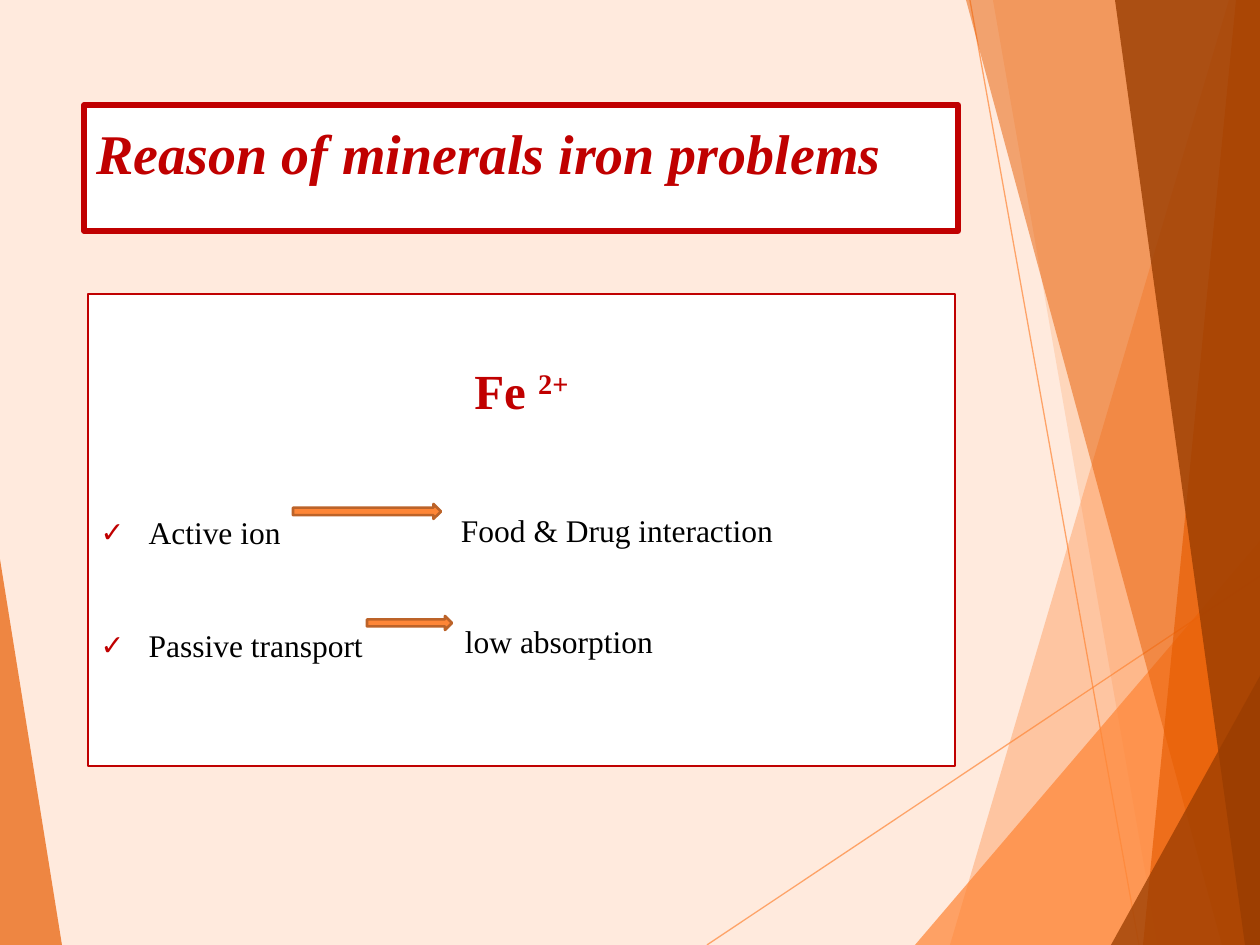
from dataclasses import dataclass

from lxml.etree import SubElement
from pptx import Presentation
from pptx.dml.color import RGBColor
from pptx.enum.shapes import MSO_CONNECTOR, MSO_SHAPE
from pptx.enum.text import MSO_ANCHOR, MSO_AUTO_SIZE, PP_ALIGN
from pptx.oxml.ns import qn
from pptx.util import Emu, Pt

PX = 914400 // 126
WIDTH, HEIGHT = 1260, 945


@dataclass(frozen=True)
class Theme:
    font: str = "Times New Roman"
    background: str = "FFEADD"
    panel: str = "FFFFFF"
    accent: str = "C00000"
    text: str = "000000"
    orange: str = "FE8637"
    deep_orange: str = "E75C01"
    brown: str = "9A3D01"
    arrow_edge: str = "BC6329"
    title_size: int = 32
    formula_size: int = 28
    body_size: int = 18


def px(value):
    return Emu(value * PX)


def set_alpha(fill_parent, percent):
    color = fill_parent.find(f".//{qn('a:srgbClr')}")
    SubElement(color, qn("a:alpha")).set("val", str(percent * 1000))


class SlideBuilder:
    def __init__(self, slide, theme):
        self.slide = slide
        self.theme = theme
        self.shapes = slide.shapes
        self.fill(slide.background, theme.background)

    def fill(self, item, color):
        item.fill.solid()
        item.fill.fore_color.rgb = RGBColor.from_string(color)

    def outline(self, shape, color, width):
        shape.line.color.rgb = RGBColor.from_string(color)
        shape.line.width = Pt(width)

    def facet(self, points, color, alpha):
        """Draw a translucent background polygon."""
        builder = self.shapes.build_freeform(*points[0], scale=PX)
        builder.add_line_segments(points[1:], close=True)
        shape = builder.convert_to_shape()
        shape.shadow.inherit = False
        self.fill(shape, color)
        set_alpha(shape._element.spPr.find(qn("a:solidFill")), alpha)
        shape.line.fill.background()

    def thin_line(self, start, end):
        line = self.shapes.add_connector(
            MSO_CONNECTOR.STRAIGHT, *map(px, start + end))
        self.outline(line, self.theme.orange, 0.75)
        properties = line._element.spPr
        set_alpha(properties.find(qn("a:ln")), 70)
        SubElement(properties, qn("a:effectLst"))

    def panel(self, index, left, top, width, height, border, inset_top):
        """Place a template placeholder as a framed panel in front."""
        shape = self.slide.placeholders[index]
        shape.left, shape.top = px(left), px(top)
        shape.width, shape.height = px(width), px(height)
        self.fill(shape, self.theme.panel)
        self.outline(shape, self.theme.accent, border)
        frame = shape.text_frame
        frame.auto_size = MSO_AUTO_SIZE.NONE
        frame.vertical_anchor = MSO_ANCHOR.TOP
        frame.margin_top = px(inset_top)
        self.shapes._spTree.append(shape._element)
        return frame

    def format_paragraph(self, paragraph, align=PP_ALIGN.LEFT, before=0,
                         bullet=None):
        paragraph.alignment = align
        paragraph.space_before = Pt(before)
        paragraph.space_after = Pt(0)
        paragraph.line_spacing = 1.0
        properties = paragraph._p.get_or_add_pPr()
        indent = px(48) if bullet else 0
        properties.set("marL", str(indent))
        properties.set("indent", str(-indent))
        if bullet:
            color = SubElement(properties, qn("a:buClr"))
            SubElement(color, qn("a:srgbClr")).set("val", self.theme.accent)
            SubElement(properties, qn("a:buSzPct")).set("val", "90000")
            SubElement(properties, qn("a:buChar")).set("char", bullet)
        else:
            SubElement(properties, qn("a:buNone"))

    def run(self, paragraph, text, size, color, bold=False, italic=False,
            baseline=None):
        run = paragraph.add_run()
        run.text = text
        font = run.font
        font.name, font.size = self.theme.font, Pt(size)
        font.bold, font.italic = bold, italic
        font.color.rgb = RGBColor.from_string(color)
        if baseline:
            run._r.get_or_add_rPr().set("baseline", str(baseline * 1000))

    def label(self, text, left, top, width, height):
        box = self.shapes.add_textbox(*map(px, (left, top, width, height)))
        frame = box.text_frame
        frame.word_wrap = True
        frame.margin_left = frame.margin_right = 0
        frame.margin_top = frame.margin_bottom = 0
        self.run(frame.paragraphs[0], text, self.theme.body_size,
                 self.theme.text)

    def arrow(self, left, top, width, height):
        shape = self.shapes.add_shape(
            MSO_SHAPE.RIGHT_ARROW, *map(px, (left, top, width, height)))
        shape.shadow.inherit = False
        self.fill(shape, self.theme.orange)
        self.outline(shape, self.theme.arrow_edge, 1.5)


def draw_backdrop(builder):
    theme = builder.theme
    builder.thin_line((707, HEIGHT), (WIDTH, 576))
    builder.thin_line((970, 0), (1139, HEIGHT))
    top_right, bottom_right = (WIDTH, 0), (WIDTH, HEIGHT)
    facets = [
        ([(1229, 0), (950, HEIGHT), bottom_right, top_right], theme.orange, 36),
        ([(993, 0), (1158, HEIGHT), bottom_right, top_right], theme.orange, 20),
        ([(915, HEIGHT), (WIDTH, 541), bottom_right], theme.orange, 72),
        ([(966, 0), (1222, HEIGHT), bottom_right, top_right],
         theme.deep_orange, 50),
        ([(1236, 0), (1143, HEIGHT), bottom_right, top_right],
         theme.deep_orange, 66),
        ([(1115, 0), (1245, HEIGHT), bottom_right, top_right], theme.brown, 80),
        ([(1111, HEIGHT), (WIDTH, 676), bottom_right], theme.brown, 76),
        ([(0, 559), (62, HEIGHT), (0, HEIGHT)], theme.deep_orange, 70),
    ]
    for points, color, alpha in facets:
        builder.facet(points, color, alpha)


def draw_content(builder):
    theme = builder.theme
    title = builder.panel(0, 84, 105, 874, 126, 3, 13).paragraphs[0]
    builder.format_paragraph(title)
    builder.run(title, "Reason of minerals iron problems", theme.title_size,
                theme.accent, bold=True, italic=True)

    body = builder.panel(1, 88, 294, 867, 472, 1, 66)
    formula = body.paragraphs[0]
    builder.format_paragraph(formula, PP_ALIGN.CENTER)
    for text, baseline in (("Fe ", None), ("2+", 30)):
        builder.run(formula, text, theme.formula_size, theme.accent,
                    bold=True, baseline=baseline)

    rows = [
        ("Active ion", 54, (293, 504, 148, 15),
         "Food & Drug interaction", 461, 511),
        ("Passive transport", 43, (367, 616, 85, 14),
         "low absorption", 465, 622),
    ]
    for cause, before, arrow, effect, left, top in rows:
        paragraph = body.add_paragraph()
        builder.format_paragraph(paragraph, before=before, bullet="✓")
        builder.run(paragraph, cause, theme.body_size, theme.text)
        builder.arrow(*arrow)
        builder.label(effect, left, top, 340, 36)


def main():
    presentation = Presentation()
    presentation.slide_width = px(WIDTH)
    presentation.slide_height = px(HEIGHT)
    slide = presentation.slides.add_slide(presentation.slide_layouts[1])
    builder = SlideBuilder(slide, Theme())
    draw_backdrop(builder)
    draw_content(builder)
    presentation.save("out.pptx")


if __name__ == "__main__":
    main()
